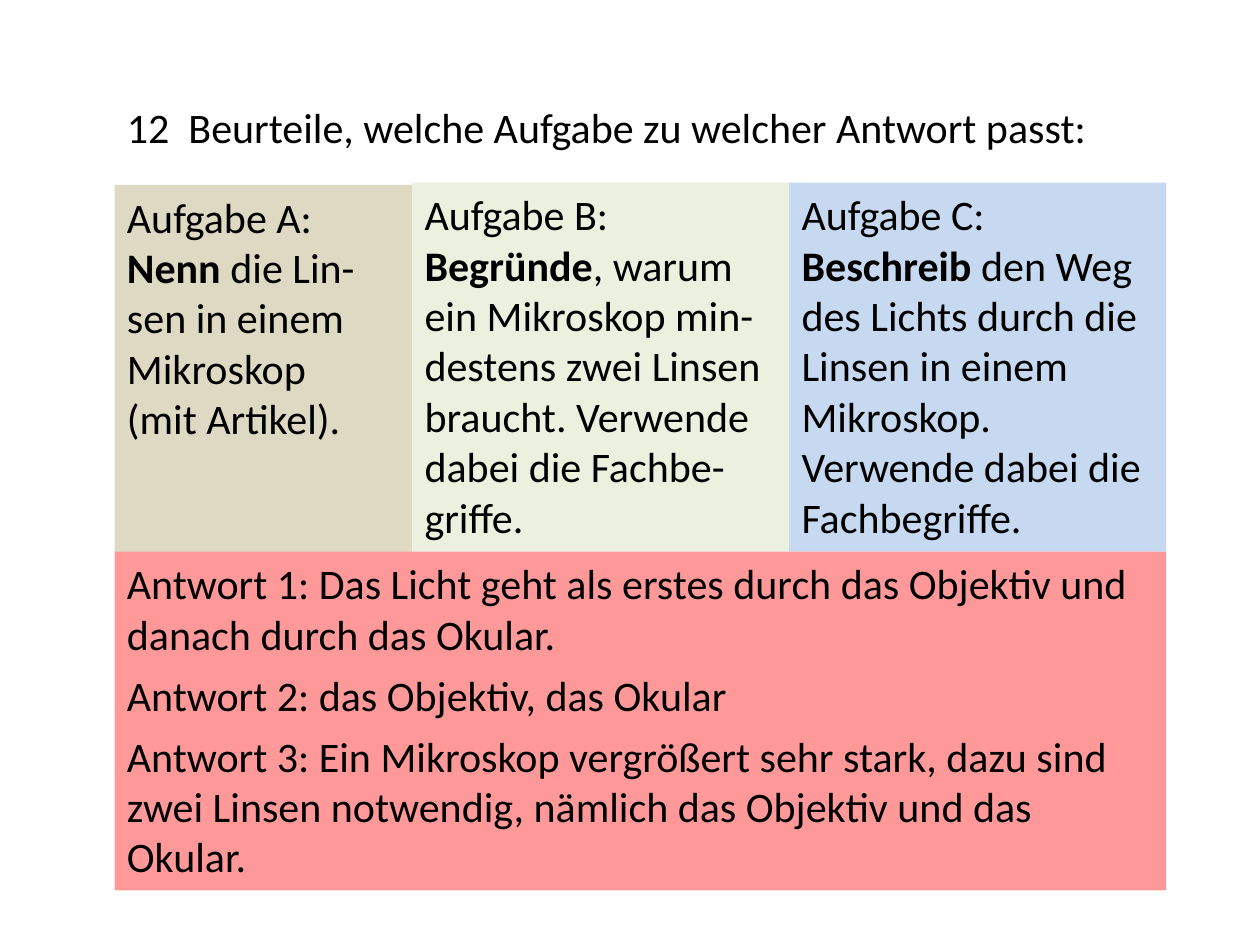
from dataclasses import dataclass

from pptx import Presentation
from pptx.dml.color import RGBColor
from pptx.enum.shapes import MSO_SHAPE
from pptx.enum.text import MSO_ANCHOR, MSO_AUTO_SIZE, PP_ALIGN
from pptx.util import Cm, Pt


@dataclass(frozen=True)
class Theme:
    font: str = "Calibri"
    size: int = 24
    ink: str = "000000"
    task_a: str = "DDD9C3"
    task_b: str = "EBF1DE"
    task_c: str = "C6D9F1"
    answers: str = "FF9999"


def write(paragraph, text, *, theme, bold=False):
    run = paragraph.add_run()
    run.text = text
    run.font.name = theme.font
    run.font.size = Pt(theme.size)
    run.font.bold = bold
    run.font.color.rgb = RGBColor.from_string(theme.ink)


class Worksheet:
    def __init__(self, slide, theme):
        self.slide = slide
        self.theme = theme

    def fill_frame(self, frame, paragraphs, gaps=()):
        frame.word_wrap = True
        frame.auto_size = MSO_AUTO_SIZE.SHAPE_TO_FIT_TEXT
        frame.vertical_anchor = MSO_ANCHOR.TOP
        for index, pieces in enumerate(paragraphs):
            paragraph = frame.add_paragraph() if index else frame.paragraphs[0]
            paragraph.alignment = PP_ALIGN.LEFT
            if index in gaps:
                paragraph.space_before = paragraph.space_after = Pt(6)
            for position, piece in enumerate(pieces):
                write(paragraph, piece, theme=self.theme, bold=position == 1)

    def heading(self, text, left, top, width, height):
        box = self.slide.shapes.add_textbox(Cm(left), Cm(top), Cm(width), Cm(height))
        self.fill_frame(box.text_frame, [[text]])

    def panel(self, paragraphs, color, left, top, width, height, gaps=()):
        box = self.slide.shapes.add_shape(
            MSO_SHAPE.RECTANGLE, Cm(left), Cm(top), Cm(width), Cm(height))
        box.shadow.inherit = False
        box.fill.solid()
        box.fill.fore_color.rgb = RGBColor.from_string(color)
        box.line.fill.background()
        self.fill_frame(box.text_frame, paragraphs, gaps)


def main():
    deck = Presentation()
    deck.slide_width, deck.slide_height = Cm(25.4), Cm(19.05)
    theme = Theme()
    sheet = Worksheet(deck.slides.add_slide(deck.slide_layouts[6]), theme)

    margin, task_height, answers_top = 2.31, 7.44, 11.12
    sheet.heading("12  Beurteile, welche Aufgabe zu welcher Antwort passt:",
                  margin, 1.93, 21, 1.28)

    tasks = [
        (theme.task_a, 3.73, 6, [
            ["Aufgabe A: ", "Nenn", " die Lin-sen in einem Mikroskop"],
            ["(mit Artikel)."]]),
        (theme.task_b, 3.68, 7.6, [
            ["Aufgabe B: ", "Begründe",
             ", warum ein Mikroskop min-destens zwei Linsen braucht. "
             "Verwende dabei die Fachbe-griffe."]]),
        (theme.task_c, 3.68, 7.6, [
            ["Aufgabe C: ", "Beschreib",
             " den Weg des Lichts durch die Linsen in einem Mikroskop. "
             "Verwende dabei die Fachbegriffe."]]),
    ]
    left = margin
    for color, top, width, paragraphs in tasks:
        sheet.panel(paragraphs, color, left, top, width, task_height)
        left += width

    answers = [
        ["Antwort 1: Das Licht geht als erstes durch das Objektiv und "
         "danach durch das Okular."],
        ["Antwort 2: das Objektiv, das Okular"],
        ["Antwort 3: Ein Mikroskop vergrößert sehr stark, dazu sind zwei "
         "Linsen notwendig, nämlich das Objektiv und das Okular."],
    ]
    sheet.panel(answers, theme.answers, margin, answers_top,
                left - margin, 6.83, gaps=(1,))

    deck.save("out.pptx")


if __name__ == "__main__":
    main()
